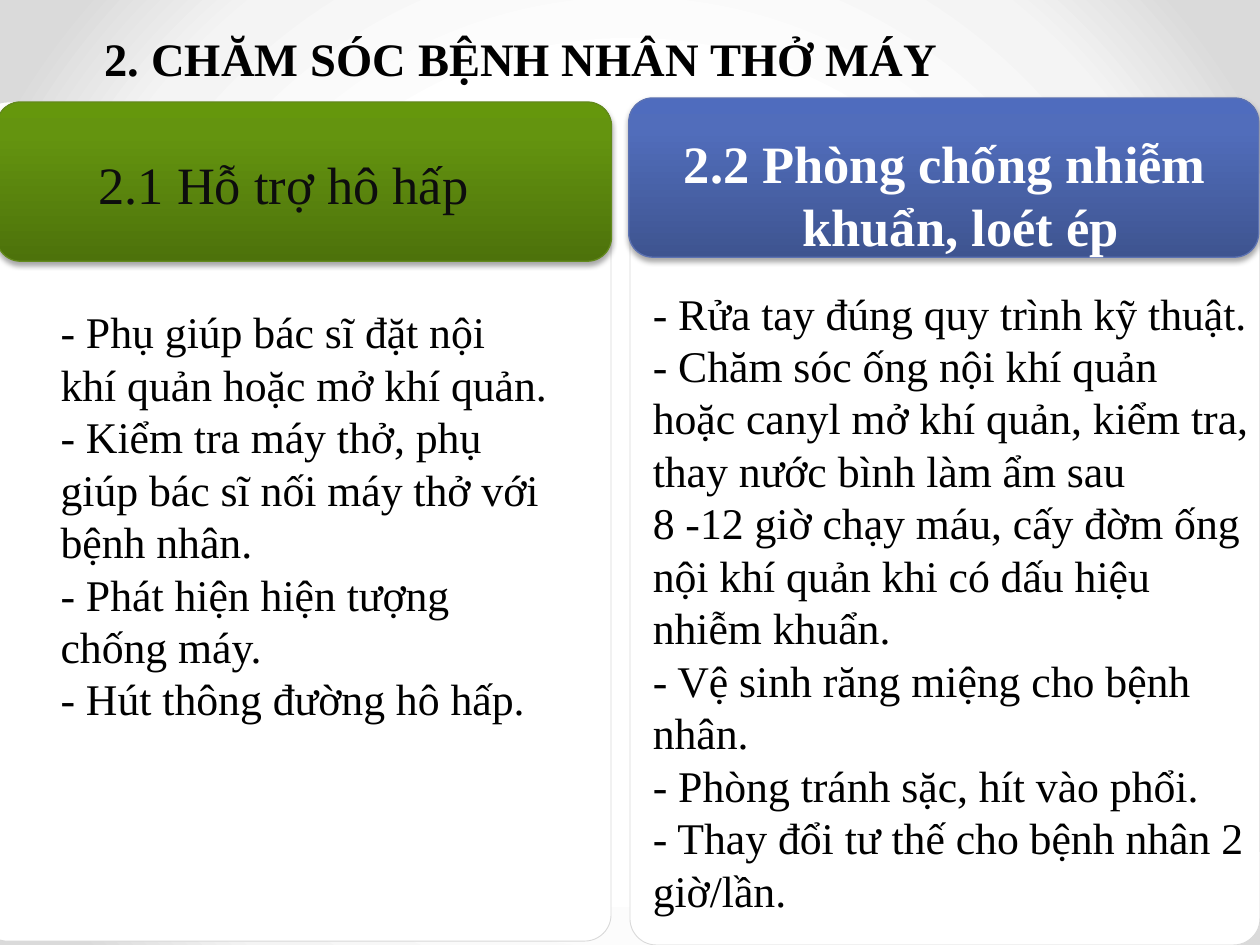
from dataclasses import dataclass

from lxml.etree import SubElement
from pptx import Presentation
from pptx.dml.color import RGBColor
from pptx.enum.shapes import MSO_SHAPE as Preset
from pptx.enum.text import MSO_ANCHOR as Anchor, MSO_AUTO_SIZE as AutoSize, PP_ALIGN as Align
from pptx.oxml.ns import qn
from pptx.util import Pt

FONT = "Times New Roman"
COLORS = {
    "white": "FFFFFF", "black": "000000", "near_black": "0D0D0D",
    "panel_line": "D9D9D9", "blue_line": "5C72B2", "green_line": "62891C",
}
BACKGROUND_STOPS = [(50, "FFFFFF"), (76, "F4F4F4"), (92, "DADADA")]
BLUE_STOPS = [(0, "3E5490"), (80, "516DBB"), (100, "4F6CBE")]
GREEN_STOPS = [(0, "4D720B"), (80, "64940F"), (100, "65970C")]

Box = tuple[float, float, float, float]  # left, top, width, height in points


@dataclass
class Column:
    heading: str
    items: list[str]
    panel_box: Box
    header_box: Box
    heading_box: Box
    body_box: Box
    stops: list[tuple[int, str]]
    line: str
    heading_color: str
    bold: bool


COLUMNS = [
    Column(
        "2.2 Phòng chống nhiễm khuẩn, loét ép",
        ["- Rửa tay đúng quy trình kỹ thuật.",
         "- Chăm sóc ống nội khí quản hoặc canyl mở khí quản, kiểm tra, "
         "thay nước bình làm ẩm sau",
         "8 -12 giờ chạy máu, cấy đờm ống nội khí quản khi có dấu hiệu nhiễm khuẩn.",
         "- Vệ sinh răng miệng cho bệnh nhân.",
         "- Phòng tránh sặc, hít vào phổi.",
         "- Thay đổi tư thế cho bệnh nhân 2 giờ/lần."],
        (360, 85.7, 360, 454.3), (359.3, 56, 360, 91),
        (368, 71.3, 344, 80), (365.8, 160, 355.7, 371),
        BLUE_STOPS, "blue_line", "white", True),
    Column(
        "2.1 Hỗ trợ hô hấp",
        ["- Phụ giúp bác sĩ đặt nội khí quản hoặc mở khí quản.",
         "- Kiểm tra máy thở, phụ giúp bác sĩ nối máy thở với bệnh nhân.",
         "- Phát hiện hiện tượng chống máy.",
         "- Hút thông đường hô hấp."],
        (-10.8, 58.3, 360, 479.5), (-2, 58.3, 351.5, 91),
        (9.4, 83.5, 305.3, 44), (27.4, 170.6, 295, 250),
        GREEN_STOPS, "green_line", "near_black", False),
]


def rgb(name: str) -> RGBColor:
    return RGBColor.from_string(COLORS[name])


def place(shape, box: Box) -> None:
    shape.left, shape.top, shape.width, shape.height = map(Pt, box)


def set_stops(gradient, stops: list[tuple[int, str]]) -> None:
    stop_list = gradient.find(qn("a:gsLst"))
    for stop in list(stop_list):
        stop_list.remove(stop)
    for position, color in stops:
        stop = SubElement(stop_list, qn("a:gs"), pos=str(position * 1000))
        SubElement(stop, qn("a:srgbClr"), val=color)


def format_paragraph(paragraph, size: float, color: str, bold: bool = False,
                     align: Align = Align.LEFT, hanging: float = 0) -> None:
    paragraph.alignment = align
    paragraph.space_before = Pt(0)
    font = paragraph.font
    font.name, font.size, font.bold = FONT, Pt(size), bold
    font.color.rgb = rgb(color)
    properties = paragraph._p.get_or_add_pPr()
    properties.set("marL", str(Pt(hanging)))
    properties.set("indent", str(Pt(-hanging)))
    default_run = properties.find(qn("a:defRPr"))
    default_run.addprevious(SubElement(properties, qn("a:buNone")))


def add_round_box(shapes, box: Box, radius: float, line: str, line_width: float):
    shape = shapes.add_shape(Preset.ROUNDED_RECTANGLE, *map(Pt, box))
    shape.adjustments[0] = radius
    shape.line.color.rgb = rgb(line)
    shape.line.width = Pt(line_width)
    shape.shadow.inherit = False
    return shape


def add_drop_shadow(shape) -> None:
    effects = shape._element.spPr.find(qn("a:effectLst"))
    shadow = SubElement(effects, qn("a:outerShdw"), blurRad=str(Pt(3.1)),
                        dist=str(Pt(1.8)), dir="5400000", rotWithShape="0")
    color = SubElement(shadow, qn("a:srgbClr"), val=COLORS["black"])
    SubElement(color, qn("a:alpha"), val="35000")


def add_column_frame(slide, column: Column) -> None:
    """Draw the white panel, its coloured header and the heading as a group."""
    shapes = slide.shapes.add_group_shape().shapes
    panel = add_round_box(shapes, column.panel_box, 0.042, "panel_line", 0.5)
    panel.fill.solid()
    panel.fill.fore_color.rgb = rgb("white")

    header = add_round_box(shapes, column.header_box, 0.152, column.line, 0.75)
    header.fill.gradient()
    header.fill.gradient_angle = 90  # counter-clockwise: first stop at the bottom
    set_stops(header._element.spPr.find(qn("a:gradFill")), column.stops)
    add_drop_shadow(header)

    heading = shapes.add_textbox(*map(Pt, column.heading_box))
    heading.text_frame.word_wrap = True
    heading.text_frame.text = column.heading
    format_paragraph(heading.text_frame.paragraphs[0], 30, column.heading_color,
                     column.bold, Align.CENTER, hanging=18)


def fill_body(slide, body, column: Column) -> None:
    place(body, column.body_box)
    slide.shapes._spTree.append(body._element)  # bring in front of the panel
    frame = body.text_frame
    frame.text = "\n".join(column.items)
    frame.auto_size = AutoSize.NONE
    for paragraph in frame.paragraphs:
        format_paragraph(paragraph, 25, "black")


def set_title(title) -> None:
    place(title, (52.6, 0, 540, 60.5))
    frame = title.text_frame
    frame.text = "2. chăm sóc bệnh nhân thở máy"
    frame.auto_size = AutoSize.NONE
    frame.vertical_anchor = Anchor.MIDDLE
    paragraph = frame.paragraphs[0]
    format_paragraph(paragraph, 33.3, "black", bold=True)
    paragraph._p.pPr.find(qn("a:defRPr")).set("cap", "small")


def set_background(slide) -> None:
    slide.background.fill.gradient()
    gradient = slide._element.xpath(".//p:bg//a:gradFill")[0]
    set_stops(gradient, BACKGROUND_STOPS)
    gradient.remove(gradient.find(qn("a:lin")))
    circle = SubElement(gradient, qn("a:path"), path="circle")
    SubElement(circle, qn("a:fillToRect"), l="50000", t="50000", r="50000", b="50000")


def main() -> None:
    presentation = Presentation()
    presentation.slide_width, presentation.slide_height = Pt(720), Pt(540)
    slide = presentation.slides.add_slide(presentation.slide_layouts[3])
    set_background(slide)
    set_title(slide.shapes.title)
    bodies = [slide.placeholders[2], slide.placeholders[1]]
    for column in COLUMNS:
        add_column_frame(slide, column)
    for body, column in zip(bodies, COLUMNS):
        fill_body(slide, body, column)
    presentation.save("out.pptx")


if __name__ == "__main__":
    main()
